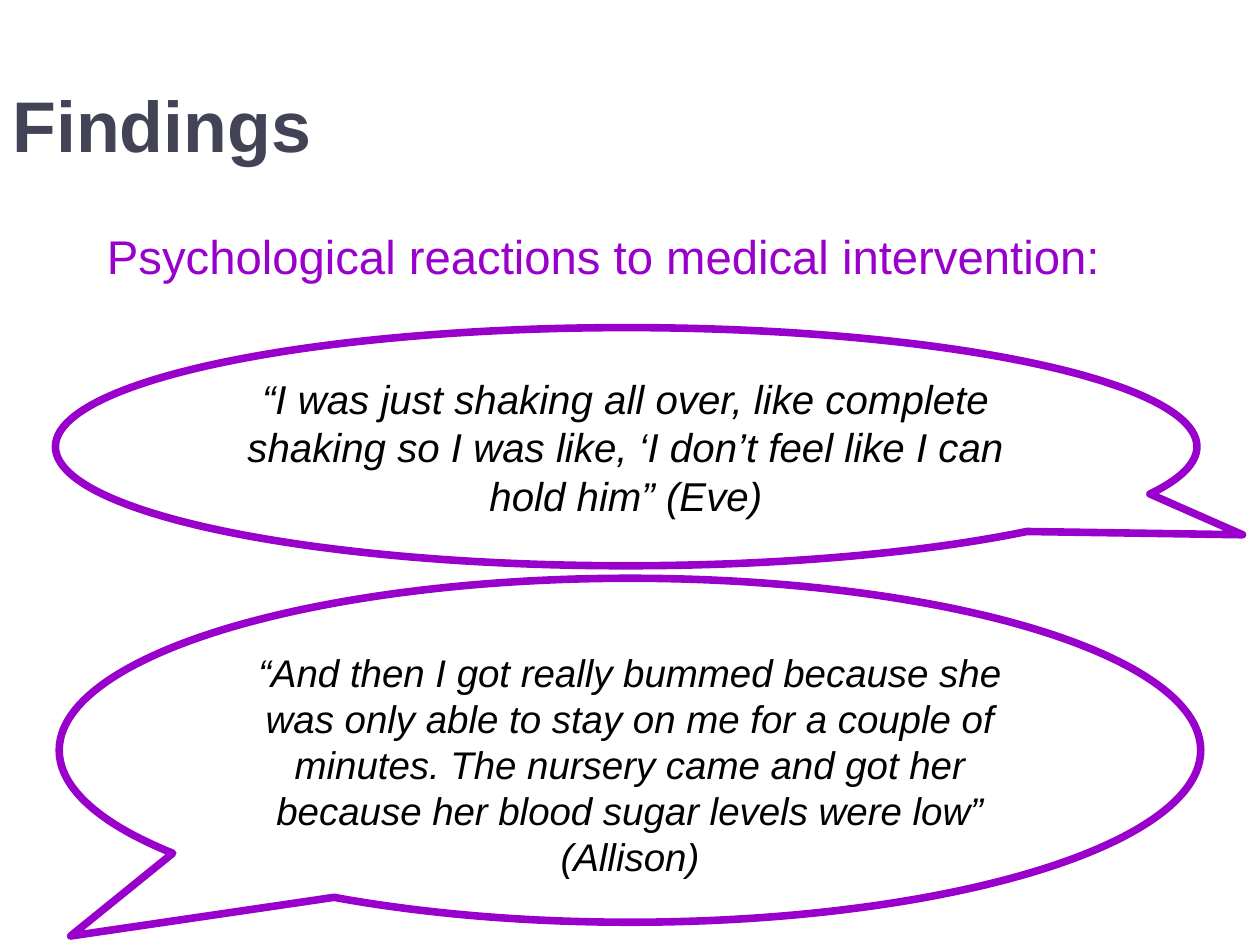
import pptx
import pptx.dml.color
import pptx.enum.shapes
import pptx.enum.text
import pptx.util

Inches = pptx.util.Inches
Pt = pptx.util.Pt
ALIGN = pptx.enum.text.PP_ALIGN
ANCHOR = pptx.enum.text.MSO_ANCHOR

PURPLE = "9900CC"
SLATE = "424456"
BLACK = "000000"


def color(code):
    return pptx.dml.color.RGBColor.from_string(code)


def write(shape, text, size, code, align=ALIGN.LEFT, anchor=ANCHOR.MIDDLE,
          bold=False, italic=False, top=0.05):
    """Fill a shape with one formatted paragraph."""
    frame = shape.text_frame
    frame.word_wrap = True
    frame.auto_size = pptx.enum.text.MSO_AUTO_SIZE.NONE
    frame.vertical_anchor = anchor
    frame.margin_top = Inches(top)
    para = frame.paragraphs[0]
    para.alignment = align
    run = para.add_run()
    run.text = text
    font = run.font
    font.name, font.size = "Arial", Pt(size)
    font.bold, font.italic = bold, italic
    font.color.rgb = color(code)


def add_title(slide, text):
    title = slide.shapes.title
    title.left, title.top = Inches(0), Inches(0.36)
    title.width, title.height = Inches(9), Inches(1.25)
    write(title, text, 41, SLATE, bold=True)


def add_lead(slide, text):
    box = slide.shapes.add_textbox(
        Inches(0.75), Inches(1.7), Inches(8.98), Inches(1.26))
    write(box, text, 27, PURPLE, anchor=ANCHOR.TOP, top=0.1)


def add_quote(slide, text, left, top, height, tail, size, inset=0.05):
    """Add a speech bubble whose tail is an offset from its centre."""
    bubble = slide.shapes.add_shape(
        pptx.enum.shapes.MSO_SHAPE.OVAL_CALLOUT,
        Inches(left), Inches(top), Inches(9.06), Inches(height))
    bubble.adjustments[0], bubble.adjustments[1] = tail
    bubble.shadow.inherit = False
    bubble.fill.background()
    bubble.line.color.rgb = color(PURPLE)
    bubble.line.width = Pt(4.33)
    write(bubble, text, size, BLACK, ALIGN.CENTER, italic=True, top=inset)


def main():
    deck = pptx.Presentation()
    deck.slide_width, deck.slide_height = Inches(10), Inches(7.5)
    slide = deck.slides.add_slide(deck.slide_layouts[5])

    # Heading
    add_title(slide, "Findings")
    add_lead(slide, "Psychological reactions to medical intervention:")

    # Quotes
    add_quote(slide, "“I was just shaking all over, like complete shaking so "
              "I was like, ‘I don’t feel like I can hold him” (Eve)",
              0.44, 2.6, 1.89, (0.54, 0.37), 23)
    add_quote(slide, "“And then I got really bummed because she was only able "
              "to stay on me for a couple of minutes. The nursery came and "
              "got her because her blood sugar levels were low” (Allison)",
              0.47, 4.59, 2.73, (-0.49, 0.54), 22, inset=0.27)

    deck.save("out.pptx")


if __name__ == "__main__":
    main()
